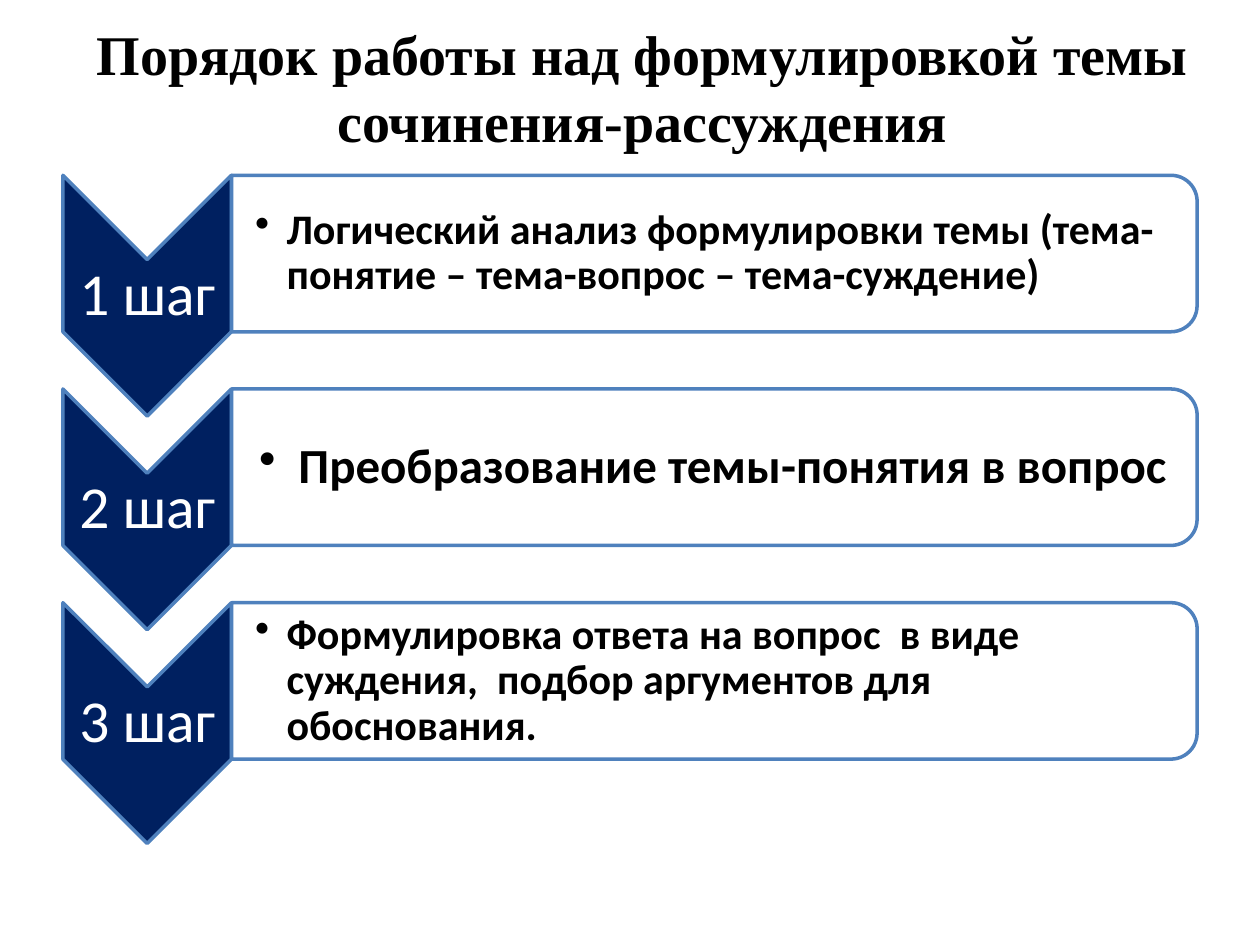
from lxml import etree
from pptx import Presentation
from pptx.dml.color import RGBColor
from pptx.enum import shapes, text
from pptx.oxml.ns import qn
from pptx.util import Pt

NAVY = RGBColor(0x00, 0x20, 0x60)
BLUE = RGBColor(0x4F, 0x81, 0xBD)
WHITE = RGBColor(0xFF, 0xFF, 0xFF)
BLACK = RGBColor(0x00, 0x00, 0x00)

STEPS = [
    ("1 шаг", "Логический анализ формулировки темы (тема-понятие – тема-вопрос – тема-суждение)", 24, 13.5, 18),
    ("2 шаг", "Преобразование темы-понятия в вопрос", 28, 15.75, 22.5),
    ("3 шаг", "Формулировка ответа на вопрос  в виде суждения,  подбор аргументов для обоснования.", 24, 13.5, 18),
]
PITCH = 122.1


def add_rotated(s, kind, cx, cy, w, h, color):
    sp = s.shapes.add_shape(kind, Pt(cx - w / 2), Pt(cy - h / 2), Pt(w), Pt(h))
    sp.rotation = 90
    sp.shadow.inherit = False
    sp.fill.solid()
    sp.fill.fore_color.rgb = color
    sp.line.color.rgb = BLUE
    sp.line.width = Pt(2)
    return sp


def add_text(s, x, y, w, h, left, words, size, color, bold):
    tf = s.shapes.add_textbox(Pt(x), Pt(y), Pt(w), Pt(h)).text_frame
    tf.word_wrap = True
    tf.vertical_anchor = text.MSO_ANCHOR.MIDDLE
    tf.margin_left = Pt(left)
    tf.margin_top = tf.margin_right = tf.margin_bottom = Pt(1.5)
    p = tf.paragraphs[0]
    p.line_spacing = 0.9
    r = p.add_run()
    r.text = words
    r.font.name = "Calibri"
    r.font.size = Pt(size)
    r.font.bold = bold
    r.font.color.rgb = color
    return p


prs = Presentation()
prs.slide_width, prs.slide_height = Pt(720), Pt(540)
s = prs.slides.add_slide(prs.slide_layouts[5])

title = s.shapes.title
title.left, title.top, title.width, title.height = Pt(14.4), Pt(21.6), Pt(705.6), Pt(55.4)
tf = title.text_frame
tf.word_wrap = True
tf.vertical_anchor = text.MSO_ANCHOR.MIDDLE
p = tf.paragraphs[0]
p.alignment = text.PP_ALIGN.CENTER
r = p.add_run()
r.text = "Порядок работы над формулировкой темы сочинения-рассуждения"
r.font.name = "Times New Roman"
r.font.size = Pt(32)
r.font.bold = True
r.font.color.rgb = BLACK

for i, (label, words, size, inset, indent) in enumerate(STEPS):
    y = 100.2 + i * PITCH

    add_rotated(s, shapes.MSO_SHAPE.CHEVRON, 84.1, y + 68.8, 137.6, 96.3, NAVY)
    p = add_text(s, 36, y + 48.2, 96.3, 41.2, 1.5, label, 34, WHITE, False)
    p.alignment = text.PP_ALIGN.CENTER

    sp = add_rotated(s, shapes.MSO_SHAPE.ROUND_2_SAME_RECTANGLE, 408.2, y + 44.7, 89.4, 551.7, WHITE)
    fill = sp.fill.fore_color._xFill.find(qn("a:srgbClr"))
    etree.SubElement(fill, qn("a:alpha")).set("val", "90000")
    p = add_text(s, 132.3, y + 4.4, 547.3, 80.7, inset, words, size, BLACK, True)
    pPr = p._p.get_or_add_pPr()
    pPr.set("marL", str(Pt(indent)))
    pPr.set("indent", str(-Pt(indent)))
    etree.SubElement(pPr, qn("a:buChar")).set("char", "•")

prs.save("out.pptx")
